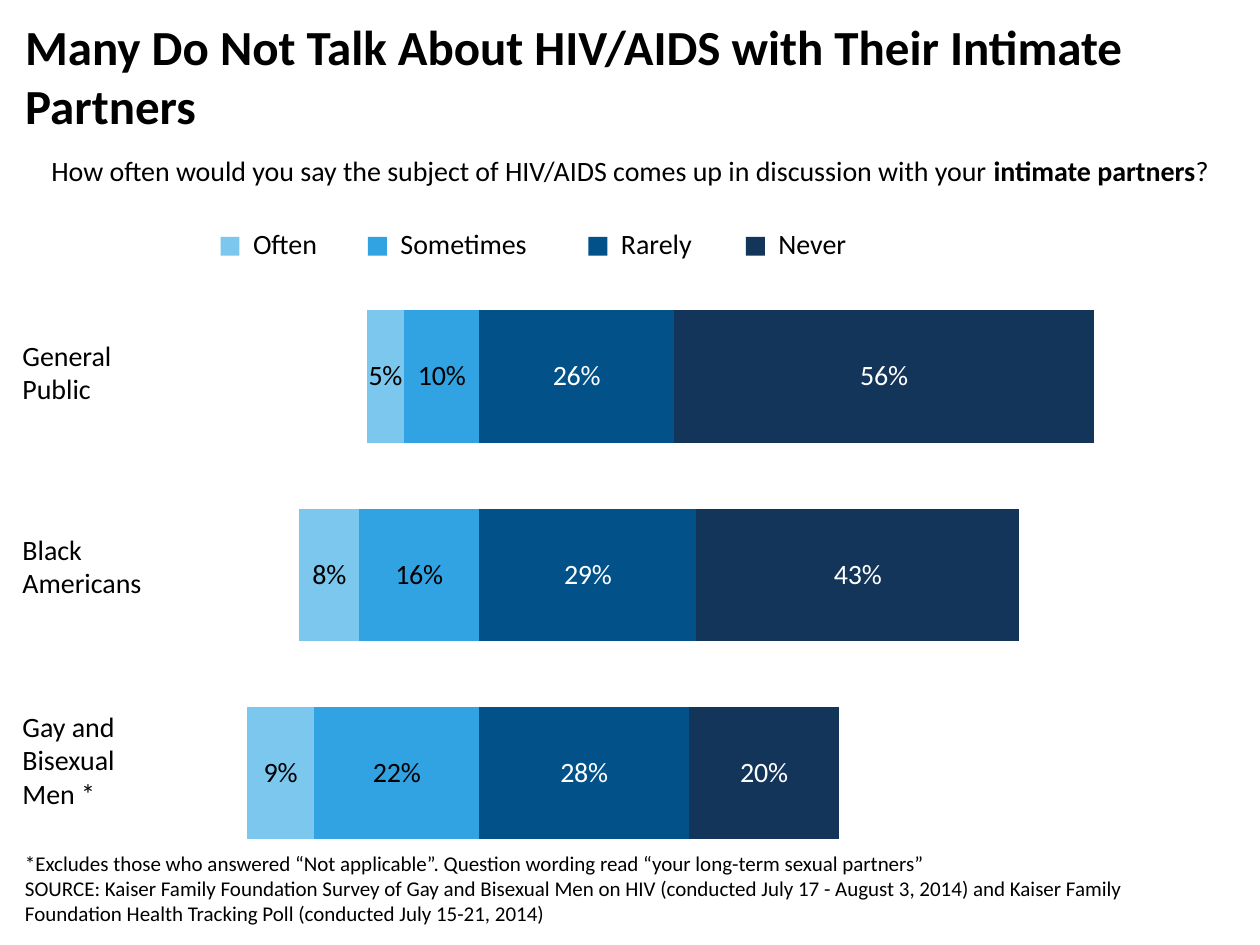
from pptx import Presentation
from pptx.chart.data import CategoryChartData
from pptx.dml.color import RGBColor
from pptx.enum.chart import XL_CHART_TYPE, XL_LABEL_POSITION
from pptx.enum.shapes import MSO_SHAPE
from pptx.enum.text import MSO_ANCHOR, MSO_AUTO_SIZE, PP_ALIGN
from pptx.oxml import parse_xml
from pptx.oxml.ns import nsdecls
from pptx.util import Inches, Pt

STACKED = XL_CHART_TYPE.BAR_STACKED
CENTER_LABEL = XL_LABEL_POSITION.CENTER
RECTANGLE = MSO_SHAPE.RECTANGLE
TOP, MIDDLE, BOTTOM = MSO_ANCHOR.TOP, MSO_ANCHOR.MIDDLE, MSO_ANCHOR.BOTTOM
LEFT, CENTER = PP_ALIGN.LEFT, PP_ALIGN.CENTER

FONT = "Calibri"
COLORS = {
    "black": "000000", "white": "FFFFFF",
    "often": "7BC7ED", "sometimes": "31A3E3", "rarely": "025189", "never": "133559",
}

TITLE = "Many Do Not Talk About HIV/AIDS with Their Intimate Partners"
QUESTION = [
    ("How often would you say the subject of HIV/AIDS comes up in discussion with your ", False),
    ("intimate partners", True),
    ("?", False),
]
FOOTNOTES = [
    "*Excludes those who answered “Not applicable”. Question wording read “your long-term sexual partners”",
    "SOURCE: Kaiser Family Foundation Survey of Gay and Bisexual Men on HIV (conducted July 17 - August 3, 2014) "
    "and Kaiser Family Foundation Health Tracking Poll (conducted July 15-21, 2014)",
]
# Label, width, height
GROUPS = [
    ("General Public", 1.17, 0.64),
    ("Black Americans", 1.42, 0.64),
    ("Gay and Bisexual Men *", 1.17, 0.91),
]
FIRST_GROUP_CENTER, GROUP_PITCH = 2.95, 1.54
# Answer, left edge of its swatch
LEGEND = [("Often", 1.75), ("Sometimes", 2.92), ("Rarely", 4.67), ("Never", 5.92)]

# Bars run from the bottom up; negative values extend left of the axis
CATEGORIES = ["1", "2", "3"]
SERIES = [
    ("Series 1", "sometimes", "black", (-0.22, -0.16, -0.10)),
    ("Series 2", "often", "black", (-0.09, -0.08, -0.05)),
    ("Series 3", "rarely", "white", (0.28, 0.29, 0.26)),
    ("Series 4", "never", "white", (0.20, 0.43, 0.56)),
]
PLOT_AREA = {"x": 0.135, "y": 0.113, "w": 0.85, "h": 0.859}


def rgb(name):
    return RGBColor.from_string(COLORS[name])


def style_font(font, size, color="black", bold=False):
    for name, value in {"name": FONT, "size": Pt(size), "bold": bold}.items():
        setattr(font, name, value)
    font.color.rgb = rgb(color)


def write(box, paragraphs, size, anchor=TOP, align=LEFT):
    """Fill a shape with paragraphs, each a list of (text, bold) spans."""
    frame = box.text_frame
    for name, value in {"word_wrap": True, "auto_size": MSO_AUTO_SIZE.NONE,
                        "vertical_anchor": anchor}.items():
        setattr(frame, name, value)
    for index, spans in enumerate(paragraphs):
        para = frame.add_paragraph() if index else frame.paragraphs[0]
        para.alignment = align
        for text, bold in spans:
            span = para.add_run()
            span.text = text
            style_font(span.font, size, bold=bold)


def add_text(page, place, paragraphs, size, **layout):
    box = page.shapes.add_textbox(*map(Inches, place))
    write(box, paragraphs, size, **layout)


def add_answer_chart(page):
    data = CategoryChartData(number_format="0%")
    data.categories = CATEGORIES
    for name, _, _, values in SERIES:
        data.add_series(name, values)
    place = map(Inches, (0.1, 1.58, 9.8, 5.5))
    chart = page.shapes.add_chart(STACKED, *place, data).chart
    chart.has_legend = chart.has_title = False
    style_font(chart.font, 18)

    for axis in (chart.category_axis, chart.value_axis):
        axis.has_major_gridlines = False
        axis.visible = False
    chart.value_axis.minimum_scale = -0.4
    chart.value_axis.maximum_scale = 1.0

    plot = chart.plots[0]
    plot.gap_width, plot.overlap, plot.vary_by_categories = 50, 100, False
    for series, (_, fill, label_color, _) in zip(plot.series, SERIES):
        series.invert_if_negative = False
        series.format.fill.solid()
        series.format.fill.fore_color.rgb = rgb(fill)
        labels = series.data_labels
        for name, value in {"show_value": True, "number_format": "0%;0%",
                            "number_format_is_linked": False,
                            "position": CENTER_LABEL}.items():
            setattr(labels, name, value)
        style_font(labels.font, 16, label_color)
    fix_plot_area(chart)


def fix_plot_area(chart):
    """Give the inner plot area a fixed place, in fractions of the chart."""
    modes = '<c:layoutTarget val="inner"/><c:xMode val="edge"/><c:yMode val="edge"/>'
    sizes = "".join(f'<c:{key} val="{value}"/>' for key, value in PLOT_AREA.items())
    layout = parse_xml(
        f'<c:layout {nsdecls("c")}><c:manualLayout>{modes}{sizes}</c:manualLayout></c:layout>')
    area = chart.plots[0]._element.getparent()
    for old in area.findall(layout.tag):
        area.remove(old)
    area.insert(0, layout)


def add_legend(page):
    for answer, left in LEGEND:
        swatch = page.shapes.add_shape(RECTANGLE, *map(Inches, (left, 1.88, 0.15, 0.15)))
        swatch.shadow.inherit = False
        swatch.fill.solid()
        swatch.fill.fore_color.rgb = rgb(answer.lower())
        swatch.line.fill.background()
        add_text(page, (left + 0.16, 1.75, 1.42, 0.37), [[(answer, False)]], 16)


def main():
    deck = Presentation()
    deck.slide_width, deck.slide_height = Inches(10), Inches(7.5)
    page = deck.slides.add_slide(deck.slide_layouts.get_by_name("Title Only"))

    title = page.shapes.title
    title.left, title.top, title.width, title.height = map(Inches, (0.1, 0.1, 9.8, 1))
    write(title, [[(TITLE, True)]], 28, anchor=MIDDLE)

    add_answer_chart(page)
    add_text(page, (0.1, 1.17, 9.8, 0.37), [QUESTION], 16, align=CENTER)
    add_text(page, (0.1, 6.8, 9.1, 0.6), [[(note, False)] for note in FOOTNOTES], 12,
             anchor=BOTTOM)
    for row, (label, width, height) in enumerate(GROUPS):
        top = FIRST_GROUP_CENTER + row * GROUP_PITCH - height / 2
        add_text(page, (0.08, top, width, height), [[(label, False)]], 16, anchor=MIDDLE)
    add_legend(page)
    deck.save("out.pptx")


if __name__ == "__main__":
    main()
